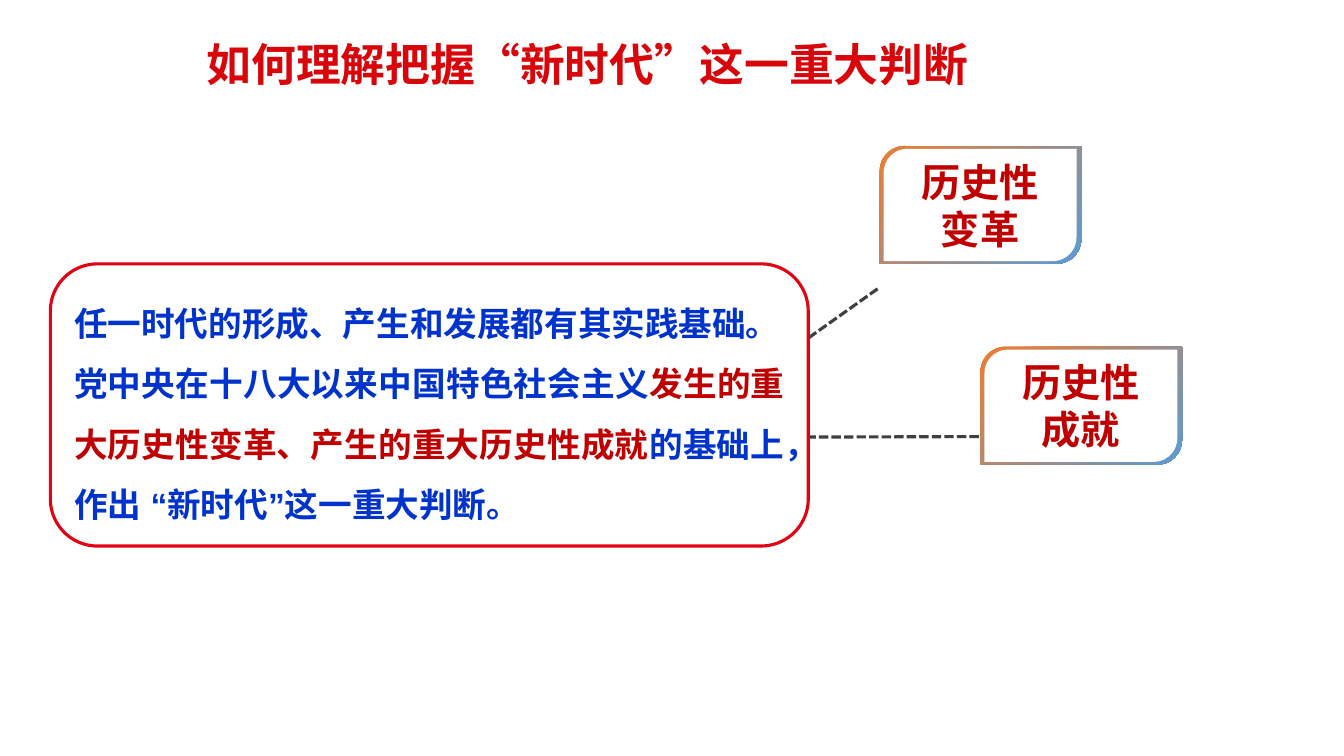
from lxml import etree
from pptx import Presentation
from pptx.dml.color import RGBColor
from pptx.enum.dml import MSO_LINE
from pptx.enum.shapes import MSO_CONNECTOR, MSO_SHAPE
from pptx.enum.text import MSO_ANCHOR, PP_ALIGN
from pptx.oxml.ns import qn
from pptx.util import Cm, Pt

BLUE, RED = "0033CC", "C00000"
TITLE = [[("如何理解把握“新时代”这一重大判断", "D8060A")]]
BASIS = [
    [("任一时代的形成、产生和发展都有其实践基础。", BLUE)],
    [("党中央在十八大以来中国特色社会主义", BLUE),
     ("发生的重大历史性变革、产生的重大历史性成就", RED),
     ("的基础上，作出 “新时代”这一重大判断。", BLUE)],
]
CARDS = [(("历史性", "变革"), 22.17, 3.68), (("历史性", "成就"), 24.71, 8.74)]
CARD_SIZE, CARD_INSET = (5.08, 2.97), (0.11, 0.07)
LINKS = [(18.11, 11.02, 25.02, 11.0), (18.06, 10.16, 22.17, 7.24)]


def color(value):
    return RGBColor.from_string(value)


def write(shape, paragraphs, size, font="Arial", align=PP_ALIGN.CENTER,
          spacing=None, anchor=MSO_ANCHOR.MIDDLE, wrap=True):
    frame = shape.text_frame
    frame.word_wrap = wrap
    frame.vertical_anchor = anchor
    for index, runs in enumerate(paragraphs):
        paragraph = frame.add_paragraph() if index else frame.paragraphs[0]
        paragraph.alignment = align
        paragraph.line_spacing = spacing
        for text, ink in runs:
            run = paragraph.add_run()
            run.text = text
            run.font.size, run.font.bold, run.font.name = Pt(size), True, font
            run.font.color.rgb = color(ink)
            east_asian = etree.SubElement(run.font._element, qn("a:ea"))
            east_asian.set("typeface", font)


def add_box(shapes, kind, left, top, width, height, fill="FFFFFF"):
    box = shapes.add_shape(kind, Cm(left), Cm(top), Cm(width), Cm(height))
    box.shadow.inherit = False
    box.line.fill.background()
    if isinstance(fill, str):
        box.fill.solid()
        box.fill.fore_color.rgb = color(fill)
    else:
        box.fill.gradient()
        box.fill.gradient_angle = 315
        for stop, ink, position in zip(box.fill.gradient_stops, fill, (0, 1)):
            stop.color.rgb = color(ink)
            stop.position = position
    return box


def add_card(slide, lines, left, top):
    group = slide.shapes.add_group_shape()
    width, height = CARD_SIZE
    dx, dy = CARD_INSET
    layers = [((left, top, width, height), ("ED7D31", "5B9BD5")),
              ((left + dx / 1.1, top + dy, width - 2 * dx, height - 2 * dy), "FFFFFF")]
    for place, fill in layers:
        face = add_box(group.shapes, MSO_SHAPE.ROUND_2_DIAG_RECTANGLE, *place, fill)
        face.adjustments[0] = 0.211
    write(face, [[(line, RED)] for line in lines], 28)


def add_link(slide, x1, y1, x2, y2):
    link = slide.shapes.add_connector(
        MSO_CONNECTOR.STRAIGHT, Cm(x1), Cm(y1), Cm(x2), Cm(y2))
    link.line.color.rgb = color("404040")
    link.line.width = Pt(2.25)
    link.line.dash_style = MSO_LINE.SQUARE_DOT
    etree.SubElement(link._element.spPr, qn("a:effectLst"))


def main():
    deck = Presentation()
    deck.slide_width, deck.slide_height = Cm(33.87), Cm(19.05)
    slide = deck.slides.add_slide(deck.slide_layouts[5])

    title = slide.shapes.title
    title.left, title.top, title.width, title.height = Cm(4.95), Cm(0.79), Cm(19.89), Cm(1.63)
    write(title, TITLE, 32, font="Noto Sans CJK SC", align=PP_ALIGN.LEFT, wrap=False)

    for ends in LINKS:
        add_link(slide, *ends)

    basis = add_box(slide.shapes, MSO_SHAPE.ROUNDED_RECTANGLE, 1.27, 6.65, 19.1, 7.11)
    basis.line.color.rgb = color("E10314")
    basis.line.width = Pt(2.25)
    write(basis, BASIS, 24, align=PP_ALIGN.JUSTIFY, spacing=1.5, anchor=MSO_ANCHOR.TOP)

    for card in CARDS:
        add_card(slide, *card)

    deck.save("out.pptx")


if __name__ == "__main__":
    main()
